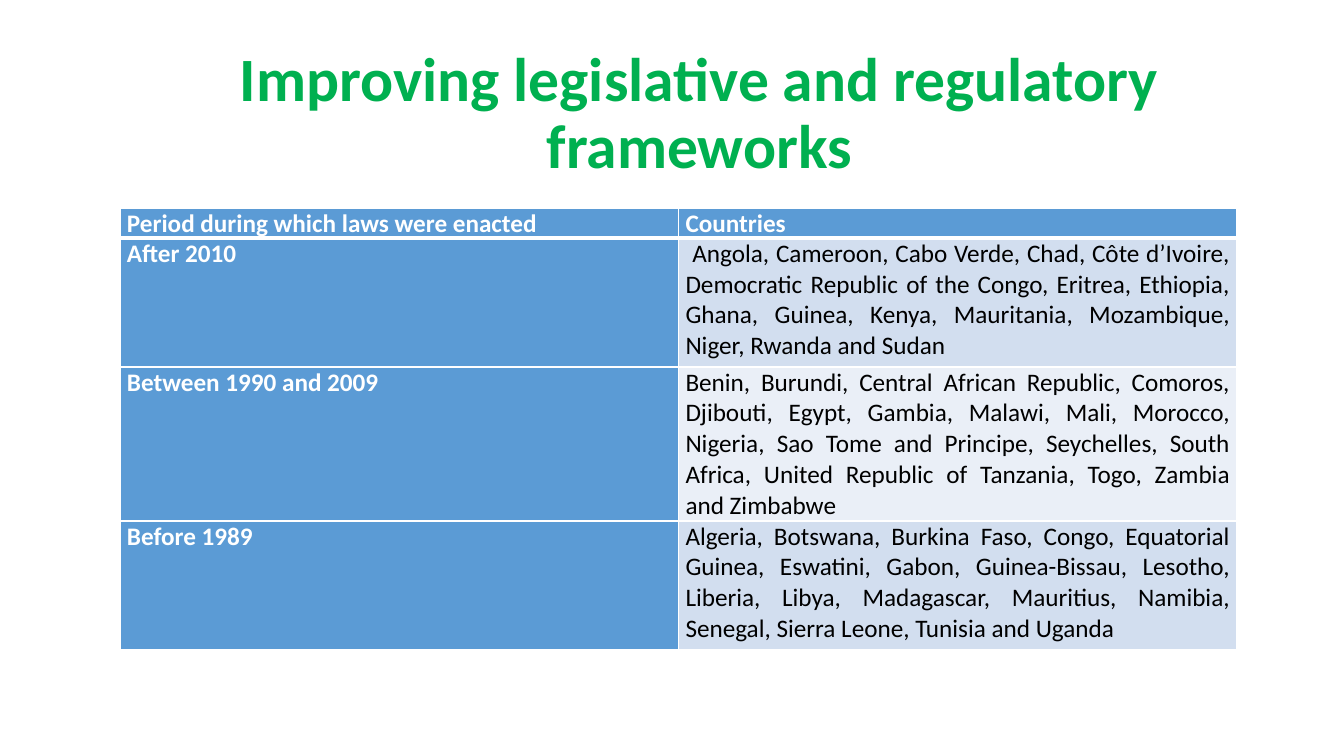
import pptx
import pptx.dml.color
import pptx.enum.text
import pptx.oxml
import pptx.oxml.ns
import pptx.util

Pt = pptx.util.Pt
ALIGN = pptx.enum.text.PP_ALIGN

TITLE = "Improving legislative and regulatory frameworks"
LAWS = [
    ("Period during which laws were enacted", "Countries"),
    ("After 2010",
     " Angola, Cameroon, Cabo Verde, Chad, Côte d’Ivoire, Democratic Republic "
     "of the Congo, Eritrea, Ethiopia, Ghana, Guinea, Kenya, Mauritania, "
     "Mozambique, Niger, Rwanda and Sudan"),
    ("Between 1990 and 2009",
     "Benin, Burundi, Central African Republic, Comoros, Djibouti, Egypt, "
     "Gambia, Malawi, Mali, Morocco, Nigeria, Sao Tome and Principe, "
     "Seychelles, South Africa, United Republic of Tanzania, Togo, Zambia "
     "and Zimbabwe"),
    ("Before 1989",
     "Algeria, Botswana, Burkina Faso, Congo, Equatorial Guinea, Eswatini, "
     "Gabon, Guinea-Bissau, Lesotho, Liberia, Libya, Madagascar, Mauritius, "
     "Namibia, Senegal, Sierra Leone, Tunisia and Uganda"),
]


def color(value):
    return pptx.dml.color.RGBColor.from_string(value)


def assign(target, formats):
    """Set each named attribute of target."""
    for name, value in formats.items():
        setattr(target, name, value)


class Page:
    font = "Calibri"
    white, black, green = "FFFFFF", "000000", "00B050"
    accent, bands = "5B9BD5", ("EAEFF7", "D2DEEF")

    def __init__(self, deck):
        self.slide = deck.slides.add_slide(deck.slide_layouts[6])

    def add_text(self, frame, text, ink, size, bold, **layout):
        para = frame.paragraphs[0]
        assign(para, layout)
        span = para.add_run()
        span.text = text
        assign(span.font, {"name": self.font, "size": Pt(size), "bold": bold})
        span.font.color.rgb = color(ink)

    def title(self, text, *place):
        box = self.slide.shapes.add_textbox(*map(Pt, place))
        box.text_frame.word_wrap = True
        self.add_text(box.text_frame, text, self.green, 44, True,
                      alignment=ALIGN.CENTER, line_spacing=0.9)

    def border(self, cell, side, width):
        line = pptx.oxml.parse_xml(
            f'<a:ln{side} {pptx.oxml.ns.nsdecls("a")} w="{Pt(width)}">'
            f'<a:solidFill><a:srgbClr val="{self.white}"/></a:solidFill>'
            f'</a:ln{side}>')
        cell._tc.get_or_add_tcPr().append(line)

    def cell(self, cell, text, row, column):
        heading = row == 0 or column == 0
        widths = {"L": 1, "R": 1, "T": 3 if row == 1 else 1,
                  "B": 3 if row == 0 else 1}
        for side, width in widths.items():
            self.border(cell, side, width)
        cell.fill.solid()
        cell.fill.fore_color.rgb = color(
            self.accent if heading else self.bands[row % 2])
        assign(cell, {"margin_left": Pt(5), "margin_right": Pt(5),
                      "margin_top": 0, "margin_bottom": 0})
        self.add_text(cell.text_frame, text,
                      self.white if heading else self.black,
                      18, heading, alignment=ALIGN.JUSTIFY)

    def table(self, rows, left, top, width, heights):
        columns = len(rows[0])
        grid = self.slide.shapes.add_table(
            len(rows), columns, Pt(left), Pt(top), Pt(width),
            Pt(sum(heights))).table
        for column in grid.columns:
            column.width = Pt(width / columns)
        for r, (texts, height) in enumerate(zip(rows, heights)):
            grid.rows[r].height = Pt(height)
            for c, text in enumerate(texts):
                self.cell(grid.cell(r, c), text, r, c)


def main():
    deck = pptx.Presentation()
    assign(deck, {"slide_width": Pt(960), "slide_height": Pt(540)})
    page = Page(deck)
    page.title(TITLE, 85.7, 31, 828, 342.7)
    page.table(LAWS, 85.7, 148.6, 798, [21.6, 92, 110, 92])
    deck.save("out.pptx")


if __name__ == "__main__":
    main()
